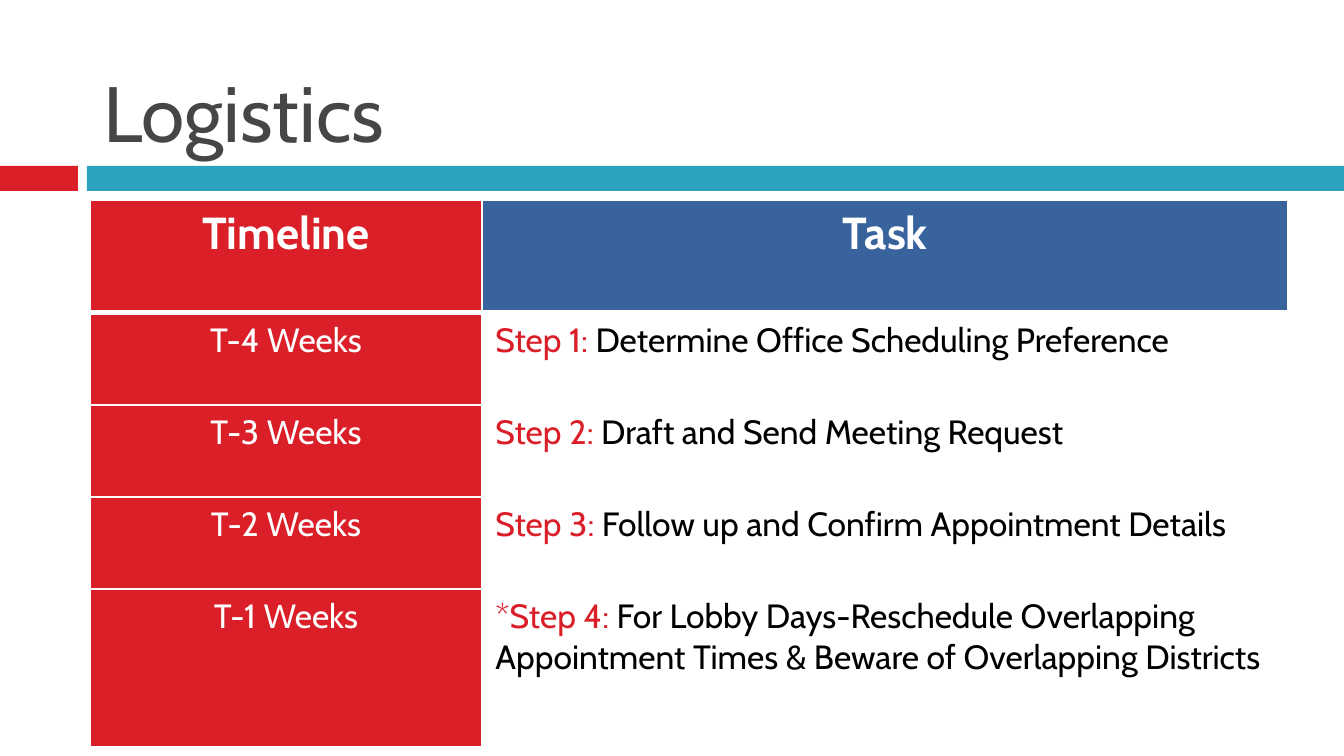
"""Build the Logistics slide: a title, a two-colour band and a timeline table."""
from dataclasses import dataclass

from lxml.etree import SubElement
from pptx import Presentation
from pptx.dml.color import RGBColor
from pptx.enum.shapes import MSO_SHAPE
from pptx.enum.text import MSO_ANCHOR, PP_ALIGN
from pptx.oxml.ns import qn
from pptx.util import Emu, Pt

TITLE = "Logistics"
HEADERS = ["Timeline", "Task"]
STEPS = [
    ("T-4 Weeks", "Step 1:", " Determine Office Scheduling Preference"),
    ("T-3 Weeks", "Step 2:", " Draft and Send Meeting Request"),
    ("T-2 Weeks", "Step 3:", " Follow up and Confirm Appointment Details"),
    ("T-1 Weeks", "*Step 4:", " For Lobby Days-Reschedule Overlapping "
     "Appointment Times & Beware of Overlapping Districts"),
]
SLIDE = (1344, 756)
TITLE_BOX = (90, 17, 1199, 148)
BAND_TOP, BAND_HEIGHT = 166, 25
TABLE_LEFT, TABLE_TOP = 90, 200
COLUMNS = [392, 806]
ROWS = [113, 92, 92, 92, 158]


@dataclass(frozen=True)
class Theme:
    font: str = "Cabin"
    red: str = "DA1F28"
    teal: str = "2DA2BF"
    blue: str = "39639D"
    grey: str = "464646"
    white: str = "FFFFFF"
    black: str = "000000"
    title: int = 42
    header: int = 24
    body: int = 18
    thin: int = 1
    thick: int = 3


THEME = Theme()
BANDS = [(0, 78, THEME.red), (87, 1257, THEME.teal)]


def px(n):
    return Emu(round(n * 914400 / 134.4))


def paint(fill, color):
    fill.solid()
    fill.fore_color.rgb = RGBColor.from_string(color)


def add_text(p, text, color=THEME.black, size=THEME.body, bold=False, align=PP_ALIGN.LEFT):
    p.alignment = align
    r = p.add_run()
    r.text = text
    r.font.name = THEME.font
    r.font.size = Pt(size)
    r.font.bold = bold
    r.font.color.rgb = RGBColor.from_string(color)


def add_borders(cell, top, bottom):
    tcPr = cell._tc.get_or_add_tcPr()
    widths = {"a:lnL": THEME.thin, "a:lnR": THEME.thin, "a:lnT": top, "a:lnB": bottom}
    for tag, width in widths.items():
        ln = SubElement(tcPr, qn(tag), w=str(Pt(width)))
        SubElement(SubElement(ln, qn("a:solidFill")), qn("a:srgbClr"), val=THEME.white)


def add_band(s, left, width, color):
    sp = s.shapes.add_shape(MSO_SHAPE.RECTANGLE, px(left), px(BAND_TOP), px(width), px(BAND_HEIGHT))
    sp.shadow.inherit = False
    paint(sp.fill, color)
    sp.line.fill.background()


def add_title(s):
    tf = s.shapes.add_textbox(*map(px, TITLE_BOX)).text_frame
    tf.word_wrap = True
    tf.vertical_anchor = MSO_ANCHOR.BOTTOM
    add_text(tf.paragraphs[0], TITLE, color=THEME.grey, size=THEME.title)


def add_timeline(s):
    table = s.shapes.add_table(len(ROWS), len(COLUMNS), px(TABLE_LEFT), px(TABLE_TOP),
                               px(sum(COLUMNS)), px(sum(ROWS))).table
    for column, width in zip(table.columns, COLUMNS):
        column.width = px(width)
    for i, height in enumerate(ROWS):
        table.rows[i].height = px(height)
        fills = (THEME.red, THEME.white if i else THEME.blue)
        for cell, fill in zip(table.rows[i].cells, fills):
            add_borders(cell, top=THEME.thick if i == 1 else THEME.thin,
                        bottom=THEME.thin if i else THEME.thick)
            paint(cell.fill, fill)
    for j, header in enumerate(HEADERS):
        add_text(table.cell(0, j).text_frame.paragraphs[0], header, color=THEME.white,
                 size=THEME.header, bold=True, align=PP_ALIGN.CENTER)
    for i, (week, step, task) in enumerate(STEPS, 1):
        add_text(table.cell(i, 0).text_frame.paragraphs[0], week, color=THEME.white,
                 align=PP_ALIGN.CENTER)
        p = table.cell(i, 1).text_frame.paragraphs[0]
        add_text(p, step, color=THEME.red)
        add_text(p, task)


def main():
    prs = Presentation()
    prs.slide_width, prs.slide_height = map(px, SLIDE)
    s = prs.slides.add_slide(prs.slide_layouts[6])
    for band in BANDS:
        add_band(s, *band)
    add_title(s)
    add_timeline(s)
    prs.save("out.pptx")


if __name__ == "__main__":
    main()
